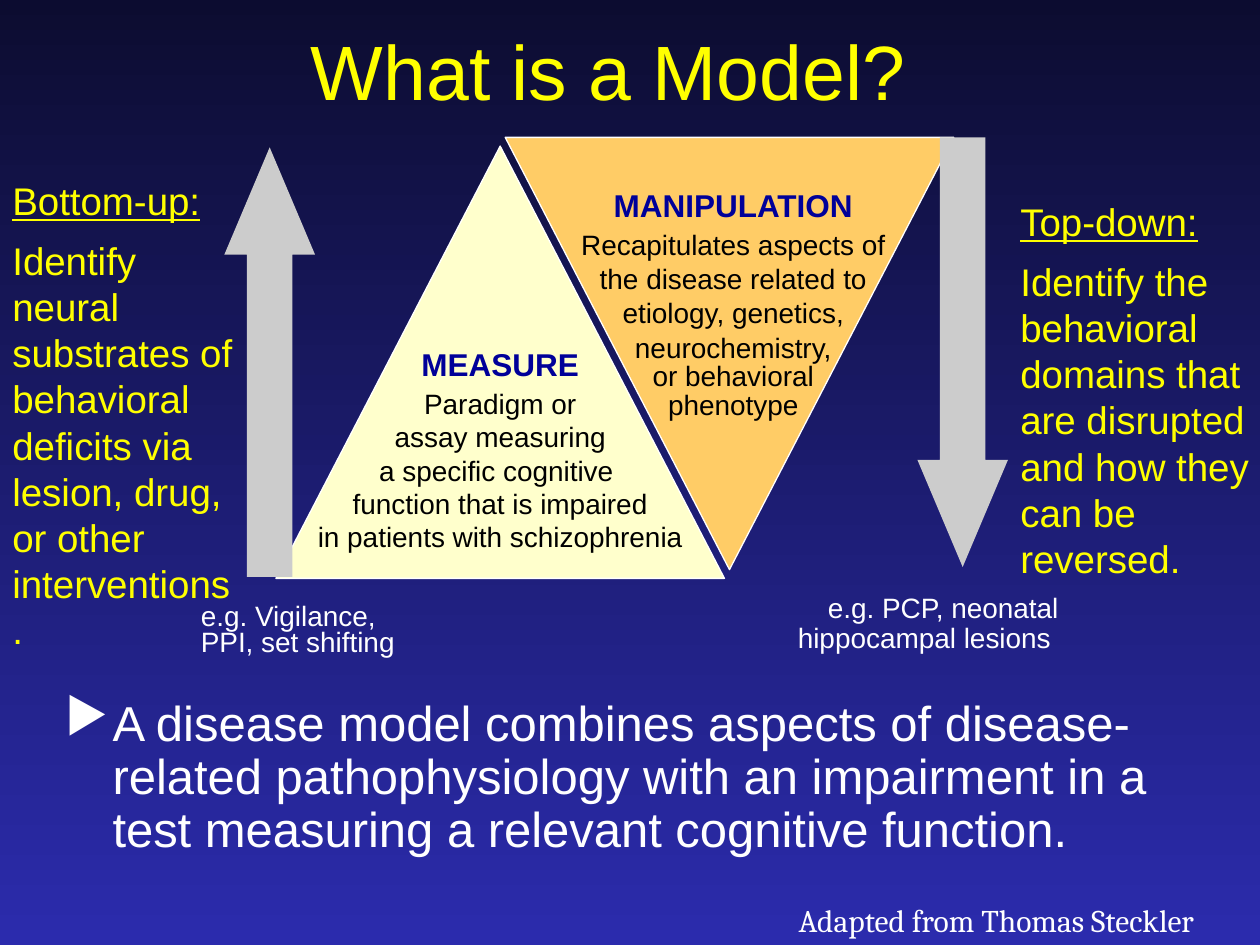
from dataclasses import dataclass

from lxml import etree
from pptx import Presentation
from pptx.dml.color import RGBColor
from pptx.enum.shapes import MSO_SHAPE
from pptx.enum.text import MSO_ANCHOR, PP_ALIGN
from pptx.oxml.ns import qn
from pptx.slide import Slide
from pptx.util import Pt

TRI = MSO_SHAPE.ISOSCELES_TRIANGLE
UP = MSO_SHAPE.UP_ARROW
DOWN = MSO_SHAPE.DOWN_ARROW
TOP = MSO_ANCHOR.TOP
LEFT = PP_ALIGN.LEFT
MID = PP_ALIGN.CENTER
RIGHT = PP_ALIGN.RIGHT

HUES = {
    "night": "0C0C30",
    "blue": "2B2BAD",
    "yellow": "FFFF00",
    "white": "FFFFFF",
    "black": "000000",
    "navy": "000099",
    "cream": "FFFFCC",
    "orange": "FFCC66",
    "grey": "CCCCCC",
}


@dataclass
class Line:
    text: str
    size: float
    hue: str
    pitch: float = 0
    gap: float = 0
    bold: bool = False
    under: bool = False
    font: str = "Arial"


@dataclass
class Block:
    left: float
    top: float
    width: float
    height: float
    lines: list[Line]
    align: PP_ALIGN = LEFT
    wrap: bool = True
    bullet: str = ""


@dataclass
class Form:
    kind: MSO_SHAPE
    left: float
    top: float
    width: float
    height: float
    hue: str
    edge: str = ""
    turn: float = 0
    ratios: tuple[float, ...] = ()


def tint(name: str) -> RGBColor:
    return RGBColor.from_string(HUES[name])


def draw_form(slide: Slide, form: Form) -> None:
    shape = slide.shapes.add_shape(
        form.kind, Pt(form.left), Pt(form.top), Pt(form.width), Pt(form.height))
    shape.shadow.inherit = False
    shape.rotation = form.turn
    for index, ratio in enumerate(form.ratios):
        shape.adjustments[index] = ratio
    shape.fill.solid()
    shape.fill.fore_color.rgb = tint(form.hue)
    if form.edge:
        shape.line.color.rgb = tint(form.edge)
        shape.line.width = Pt(0.75)
    else:
        shape.line.fill.background()


def draw_block(slide: Slide, block: Block) -> None:
    box = slide.shapes.add_textbox(
        Pt(block.left), Pt(block.top), Pt(block.width), Pt(block.height))
    frame = box.text_frame
    frame.word_wrap = block.wrap
    frame.vertical_anchor = TOP
    frame.margin_top = frame.margin_bottom = Pt(0)
    for index, line in enumerate(block.lines):
        para = frame.add_paragraph() if index else frame.paragraphs[0]
        para.alignment = block.align
        para.space_before = Pt(line.gap)
        if line.pitch:
            para.line_spacing = Pt(line.pitch)
        if block.bullet:
            props = para._p.get_or_add_pPr()
            props.set("marL", str(Pt(27)))
            props.set("indent", str(-Pt(27)))
            etree.SubElement(props, qn("a:buChar")).set("char", block.bullet)
        run = para.add_run()
        run.text = line.text
        run.font.name = line.font
        run.font.size = Pt(line.size)
        run.font.bold = line.bold
        run.font.underline = line.under
        run.font.color.rgb = tint(line.hue)


def side(head: str, body: str) -> list[Line]:
    return [Line(head, 22, "yellow", 26.4, under=True),
            Line(body, 22, "yellow", 26.4, gap=7.8)]


def panel(head: str, rows: list[tuple[str, float]]) -> list[Line]:
    return [Line(head, 18, "navy", 20, bold=True),
            *(Line(text, 16, "black", pitch) for text, pitch in rows)]


FORMS = [
    Form(TRI, 157.7, 83.5, 256.3, 247, "cream", "white"),
    Form(TRI, 288.7, 78.5, 256.3, 247, "orange", "white", 180),
    Form(UP, 128.2, 84.2, 51.8, 245.5, "grey", ratios=(0.5, 1.183)),
    Form(DOWN, 524.2, 78.5, 51.8, 245.5, "grey", ratios=(0.5, 1.183)),
]

BLOCKS = [
    Block(41.8, 16.4, 612, 54,
          [Line("What is a Model?", 44, "yellow", 50)], MID),
    Block(157.7, 198.6, 256.3, 120, panel("MEASURE", [
        ("Paradigm or", 21.3),
        ("assay measuring", 19.1),
        ("a specific cognitive ", 19.1),
        ("function that is impaired", 19.1),
        ("in patients with schizophrenia", 19.1),
    ]), MID),
    Block(216.7, 107.8, 404.6, 134, panel("MANIPULATION", [
        ("Recapitulates aspects of", 21.3),
        ("the disease related to", 19.6),
        ("etiology, genetics,", 19.6),
        ("neurochemistry,", 19.6),
        ("or behavioral", 16.4),
        ("phenotype", 16.4),
    ]), MID),
    Block(0, 101.2, 144, 272, side(
        "Bottom-up:",
        "Identify neural substrates of behavioral deficits via lesion, "
        "drug, or other interventions.")),
    Block(576, 113.2, 161.3, 220, side(
        "Top-down:",
        "Identify the behavioral domains that are disrupted and how they "
        "can be reversed.")),
    Block(107.7, 346.1, 133, 32,
          [Line("e.g. Vigilance, PPI, set shifting", 16, "white", 15)]),
    Block(419.8, 339.5, 192.2, 36,
          [Line("e.g. PCP, neonatal hippocampal lesions ", 16, "white", 17)],
          RIGHT),
    Block(30.2, 399, 666, 100, [Line(
        "A disease model combines aspects of disease-related pathophysiology "
        "with an impairment in a test measuring a relevant cognitive function.",
        28, "white", 30.3)], bullet="▶"),
    Block(449.3, 514.8, 242.6, 24,
          [Line("Adapted from Thomas Steckler", 18, "white", font="Cambria")],
          wrap=False),
]


def main() -> None:
    deck = Presentation()
    deck.slide_width, deck.slide_height = Pt(720), Pt(540)
    slide = deck.slides.add_slide(deck.slide_layouts[6])
    fill = slide.background.fill
    fill.gradient()
    fill.gradient_angle = 270
    for stop, name in zip(fill.gradient_stops, ("night", "blue")):
        stop.color.rgb = tint(name)
    for form in FORMS:
        draw_form(slide, form)
    for block in BLOCKS:
        draw_block(slide, block)
    deck.save("out.pptx")


if __name__ == "__main__":
    main()
